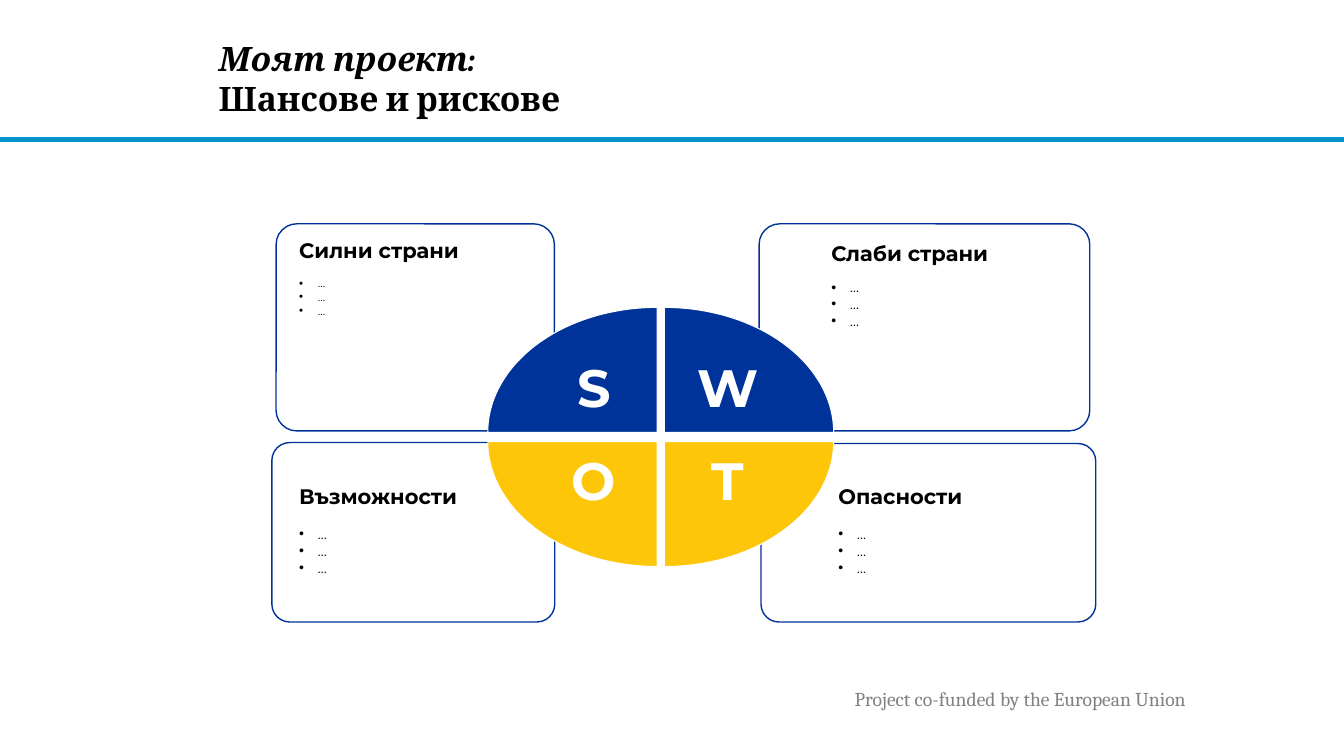
import math
import pptx
import pptx.util
import pptx.dml.color
import pptx.enum.shapes
import pptx.enum.text
import pptx.oxml
import pptx.oxml.ns

Pt = pptx.util.Pt
RGBColor = pptx.dml.color.RGBColor
Shapes = pptx.enum.shapes.MSO_SHAPE
Align = pptx.enum.text.PP_ALIGN
Anchor = pptx.enum.text.MSO_ANCHOR

BLACK = RGBColor(0x00, 0x00, 0x00)
WHITE = RGBColor(0xFF, 0xFF, 0xFF)
GREY = RGBColor(0x80, 0x80, 0x80)
NAVY = RGBColor(0x00, 0x33, 0x99)
YELLOW = RGBColor(0xFD, 0xC6, 0x08)
TEAL = RGBColor(0x0C, 0x94, 0xB7)
SKY = RGBColor(0x00, 0x96, 0xD3)


def style(font, color, **values):
    for name, value in values.items():
        setattr(font, name, value)
    font.color.rgb = color


def set_frame(frame, **values):
    frame.word_wrap = True
    for name, value in values.items():
        setattr(frame, name, value)


deck = pptx.Presentation()
deck.slide_width, deck.slide_height = Pt(960), Pt(540)
page = deck.slides.add_slide(deck.slide_layouts[5])

rule = page.shapes.add_shape(Shapes.RECTANGLE, Pt(0), Pt(98.6), Pt(960), Pt(2.2))
rule.shadow.inherit = False
rule.fill.solid()
rule.fill.fore_color.rgb = TEAL
rule.line.color.rgb = SKY
rule.line.width = Pt(1)

title = page.shapes.title
title.left, title.top, title.width, title.height = Pt(156.2), Pt(13), Pt(523.4), Pt(85.7)
set_frame(title.text_frame, vertical_anchor=Anchor.MIDDLE,
          auto_size=pptx.enum.text.MSO_AUTO_SIZE.NONE,
          margin_left=0, margin_top=0, margin_right=0, margin_bottom=0)
para = title.text_frame.paragraphs[0]
para.alignment = Align.LEFT
for text, italic in (("Моят проект:", True), ("Шансове и рискове", False)):
    span = para.add_run()
    span.text = text
    style(span.font, BLACK, name="Cambria", size=Pt(24), bold=True, italic=italic)
    if italic:
        para.add_line_break()

footer = page.shapes.add_textbox(Pt(603.4), Pt(487.4), Pt(351.4), Pt(24.5))
set_frame(footer.text_frame)
para = footer.text_frame.paragraphs[0]
para.text = "Project co-funded by the European Union"
style(para.font, GREY, name="Cambria", size=Pt(14))

panels = [
    (542.2, 159.9, 236.2, 147.9),
    (197.2, 159.9, 198.8, 147.9),
    (543.6, 316.8, 239.1, 127.5),
    (194.2, 316.1, 202.1, 128.2),
]
for bounds in panels:
    panel = page.shapes.add_shape(Shapes.ROUNDED_RECTANGLE, *map(Pt, bounds))
    panel.adjustments[0] = 0.1
    panel.shadow.inherit = False
    panel.fill.background()
    panel.line.color.rgb = NAVY
    panel.line.width = Pt(1)

RADIUS_X, RADIUS_Y = 121, 89.3
STEPS = 45
quadrants = [
    ("S", 469.4, 308.9, -1, -1, NAVY),
    ("W", 474.5, 308.9, 1, -1, NAVY),
    ("T", 474.5, 315.4, 1, 1, YELLOW),
    ("O", 469.4, 315.4, -1, 1, YELLOW),
]
for letter, corner_x, corner_y, side_x, side_y, color in quadrants:
    angles = [math.pi / 2 * step / STEPS for step in range(STEPS + 1)]
    arc = [(Pt(corner_x + side_x * RADIUS_X * math.cos(angle)),
            Pt(corner_y + side_y * RADIUS_Y * math.sin(angle))) for angle in angles]
    builder = page.shapes.build_freeform(Pt(corner_x), Pt(corner_y))
    builder.add_line_segments(arc, close=True)
    quadrant = builder.convert_to_shape()
    quadrant.shadow.inherit = False
    quadrant.fill.solid()
    quadrant.fill.fore_color.rgb = color
    quadrant.line.color.rgb = WHITE
    quadrant.line.width = Pt(0.75)
    set_frame(quadrant.text_frame,
              vertical_anchor=Anchor.BOTTOM if side_y < 0 else Anchor.TOP,
              margin_left=Pt(40 if side_x < 0 else 9.4),
              margin_right=Pt(9.4 if side_x < 0 else 40),
              margin_top=Pt(40 if side_y < 0 else 9.4),
              margin_bottom=Pt(9.4 if side_y < 0 else 40))
    para = quadrant.text_frame.paragraphs[0]
    para.text = letter
    para.alignment = Align.CENTER
    para.line_spacing = 0.9
    para.space_after = Pt(22.7)
    style(para.font, WHITE, name="Montserrat", size=Pt(37.5), bold=True)

lists = [
    ("Силни страни", 206.6, 166.3, 174.2, 136.8, 8.2, 9.6),
    ("Слаби страни", 586.8, 168, 203.8, 128, 10, 9.6),
    ("Опасности", 591.8, 342, 195.1, 114.5, 10, 12),
    ("Възможности", 206.6, 342, 177.1, 106.6, 10, 12),
]
for heading, left, top, width, height, size, gap in lists:
    box = page.shapes.add_textbox(Pt(left), Pt(top), Pt(width), Pt(height))
    set_frame(box.text_frame)
    para = box.text_frame.paragraphs[0]
    para.text = heading
    para.space_after = Pt(gap)
    style(para.font, BLACK, name="Montserrat", size=Pt(15), bold=True)
    for item in range(3):
        para = box.text_frame.add_paragraph()
        para.text = "…"
        props = para._p.get_or_add_pPr()
        props.set("marL", str(Pt(13.7)))
        props.set("indent", str(-Pt(13.7)))
        for tag, name, value in (("buFont", "typeface", "Arial"), ("buChar", "char", "•")):
            bullet = pptx.oxml.parse_xml(
                f'<a:{tag} {pptx.oxml.ns.nsdecls("a")} {name}="{value}"/>')
            props.append(bullet)
        style(para.font, BLACK, name="Montserrat", size=Pt(size), italic=True)

deck.save("out.pptx")
